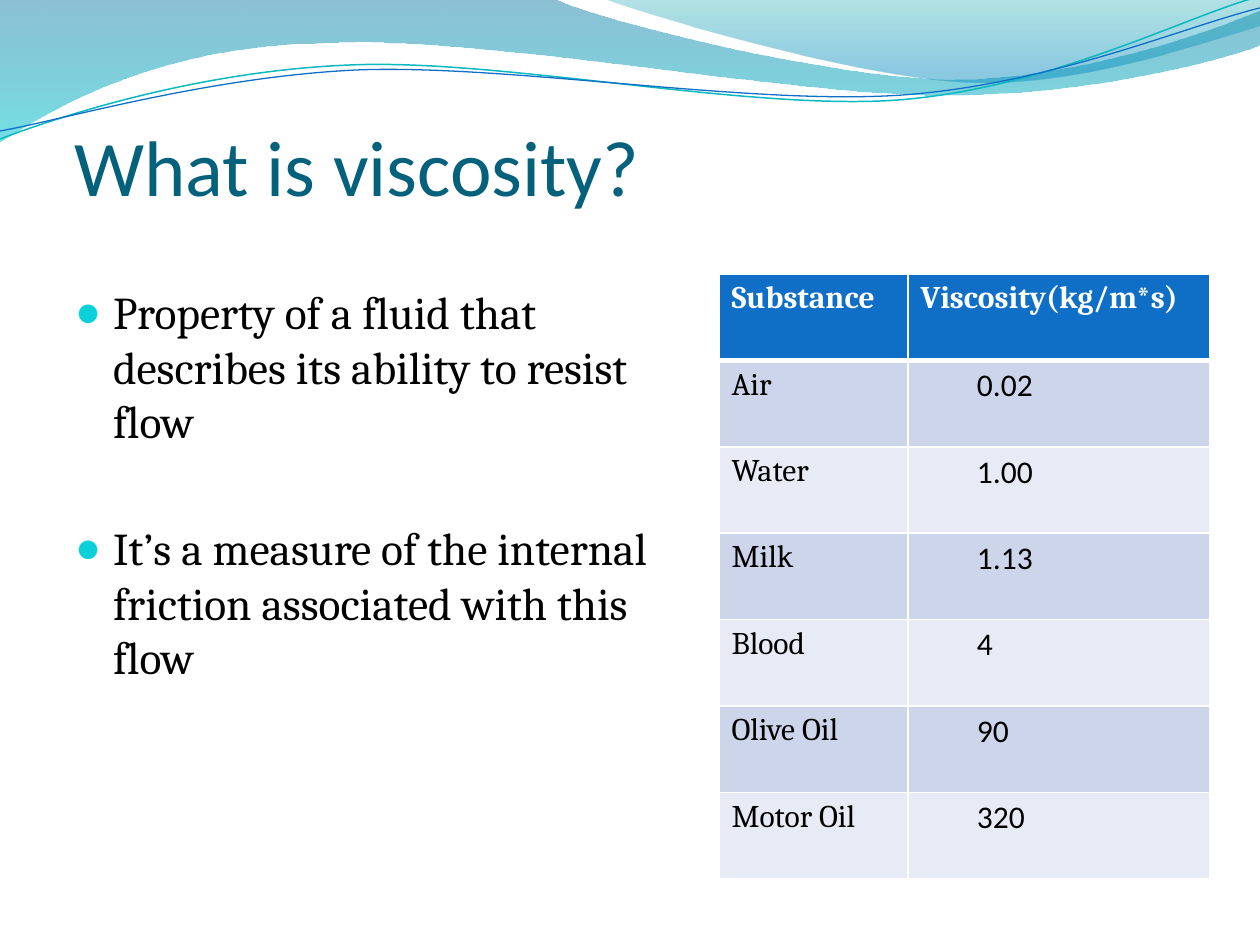
from lxml import etree
from pptx import Presentation
from pptx.dml.color import RGBColor
from pptx.enum.text import MSO_ANCHOR, MSO_AUTO_SIZE, PP_ALIGN
from pptx.oxml.ns import qn
from pptx.util import Pt

PX = 914400 / 126
BOTTOM, TOP = MSO_ANCHOR.BOTTOM, MSO_ANCHOR.TOP
LEFT = PP_ALIGN.LEFT
FIXED = MSO_AUTO_SIZE.NONE

WHITE = RGBColor(0xFF, 0xFF, 0xFF)
BLACK = RGBColor(0, 0, 0)
BLUE = RGBColor(0x0F, 0x6F, 0xC6)
TEAL = RGBColor(0x0A, 0xB8, 0xBF)
CYAN = RGBColor(0x0B, 0xD0, 0xD9)
TITLE = RGBColor(0x04, 0x61, 0x7B)
BANDS = RGBColor(0xCC, 0xD5, 0xEA), RGBColor(0xE7, 0xEB, 0xF5)

# Outlines: a pair is a line's end, six numbers are a Bezier curve.
# Stops: position, colour, opacity in percent.
WAVES = [
    ([(0, 0), (554, -1), (600, 21, 837, 79, 955, 79),
      (1075, 79, 1207, 33, 1260, 11), (1261, 45),
      (1239, 55, 1096, 96, 940, 95), (784, 95, 481, 35, 324, 43),
      (163, 45, 58, 105, -1, 142), (0, 0)],
     [(0, RGBColor(0x00, 0x74, 0xA1), 45), (1, RGBColor(0x00, 0xC6, 0xCF), 55)]),
    ([(604, -1), (641, 14, 859, 78, 969, 82),
      (1079, 87, 1211, 40, 1260, 26), (1260, 0), (604, -1)],
     [(0, RGBColor(0x00, 0xA1, 0xA9), 30), (0.8, RGBColor(0x00, 0x8B, 0xBF), 45)]),
]
LINES = [
    ([(0, 139), (60, 116, 199, 71, 349, 65), (498, 58, 747, 111, 898, 100),
      (1050, 88, 1182, 18, 1257, -3)], TEAL, 0.85),
    ([(0, 131), (59, 121, 207, 77, 357, 70), (508, 64, 752, 106, 903, 95),
      (1053, 84, 1186, 26, 1260, 8)], BLUE, 0.75),
]
POINTS = [
    "Property of a fluid that describes its ability to resist flow",
    "It’s a measure of the internal friction associated with this flow",
]
ROWS = [
    ("Substance", "Viscosity(kg/m*s)"),
    ("Air", "0.02"),
    ("Water", "1.00"),
    ("Milk", "1.13"),
    ("Blood", "4"),
    ("Olive Oil", "90"),
    ("Motor Oil", "320"),
]


def px(n):
    return round(n * PX)


def style(para, face, size, color, bold=False):
    font = para.font
    font.name, font.size, font.bold = face, Pt(size), bold
    font.color.rgb = color


def outline(slide, path, close):
    """Draw a freeform, then join each curve's three points into a Bezier."""
    pts = [(px(seg[i]), px(seg[i + 1]))
           for seg in path for i in range(0, len(seg), 2)]
    pen = slide.shapes.build_freeform(*pts[0])
    pen.add_line_segments(pts[1:], close=close)
    shape = pen.convert_to_shape()
    shape.shadow.inherit = False
    steps = iter(list(shape._element.spPr.iter(qn("a:lnTo"))))
    for seg in path[1:]:
        first = next(steps)
        if len(seg) == 6:
            curve = etree.Element(qn("a:cubicBezTo"))
            first.addprevious(curve)
            for step in (first, next(steps), next(steps)):
                curve.append(step[0])
                step.getparent().remove(step)
    return shape


def add_wave(slide, path, stops):
    shape = outline(slide, path, True)
    shape.line.fill.background()
    fill = shape.fill
    fill.gradient()
    fill.gradient_angle = 270
    for stop, (pos, color, _) in zip(fill.gradient_stops, stops):
        stop.position = pos
        stop.color.rgb = color
    tints = shape._element.spPr.iter(qn("a:srgbClr"))
    for tint, (_, _, alpha) in zip(list(tints), stops):
        etree.SubElement(tint, qn("a:alpha"), val=str(alpha * 1000))


def add_line(slide, path, color, width):
    shape = outline(slide, path, False)
    shape.fill.background()
    shape.line.color.rgb = color
    shape.line.width = Pt(width)


def place(shape, box, inset, anchor):
    """Move a placeholder to the front and set its box and insets."""
    shape.left, shape.top, shape.width, shape.height = map(px, box)
    frame = shape.text_frame
    (frame.margin_left, frame.margin_top,
     frame.margin_right, frame.margin_bottom) = map(px, inset)
    frame.auto_size = FIXED
    frame.word_wrap = True
    frame.vertical_anchor = anchor
    shape._element.getparent().append(shape._element)
    return frame


def add_title(slide, text):
    frame = place(slide.shapes.title, (74, 105, 1134, 107), (0, 6, 0, 0), BOTTOM)
    frame.text = text
    para = frame.paragraphs[0]
    para.alignment = LEFT
    style(para, "Calibri", 45, TITLE)


def add_list(slide, items):
    frame = place(slide.placeholders[1], (62, 214, 646, 630),
                  (13, 70, 13, 6), TOP)
    frame.text = "\n".join(items)
    for i, para in enumerate(frame.paragraphs):
        para.space_before = Pt(41.5 if i else 0)
        style(para, "Cambria", 26, BLACK)
        props = para._p.get_or_add_pPr()
        props.set("marL", str(px(38)))
        props.set("indent", str(px(-38)))
        mark = etree.Element(qn("a:buClr"))
        etree.SubElement(mark, qn("a:srgbClr"), val=str(CYAN))
        size = etree.Element(qn("a:buSzPct"), val="95000")
        char = etree.Element(qn("a:buChar"), char="●")
        spot = props.index(props.find(qn("a:defRPr")))
        props[spot:spot] = [mark, size, char]


def add_rules(cell, row):
    props = cell._tc.get_or_add_tcPr()
    for i, side in enumerate("LRTB"):
        thick = (row, side) in ((0, "B"), (1, "T"))
        rule = etree.Element(qn("a:ln" + side), w=str(Pt(3 if thick else 1)))
        fill = etree.SubElement(rule, qn("a:solidFill"))
        etree.SubElement(fill, qn("a:srgbClr"), val=str(WHITE))
        props.insert(i, rule)


def add_grid(slide, rows):
    box = map(px, (719, 274, 491, 605))
    grid = slide.shapes.add_table(len(rows), 2, *box).table
    for col, width in zip(grid.columns, (189, 302)):
        col.width = px(width)
    for r, row in enumerate(rows):
        for c, text in enumerate(row):
            cell = grid.cell(r, c)
            cell.text = text
            cell.fill.solid()
            cell.fill.fore_color.rgb = BANDS[(r - 1) % 2] if r else BLUE
            add_rules(cell, r)
            value = r > 0 and c == 1
            if value:
                cell.margin_left = px(69)
            style(cell.text_frame.paragraphs[0],
                  "Calibri" if value else "Cambria", 18,
                  BLACK if r else WHITE, r == 0)


def main():
    deck = Presentation()
    deck.slide_width, deck.slide_height = px(1260), px(945)
    slide = deck.slides.add_slide(deck.slide_layouts[1])
    for wave in WAVES:
        add_wave(slide, *wave)
    for line in LINES:
        add_line(slide, *line)
    add_title(slide, "What is viscosity?")
    add_list(slide, POINTS)
    add_grid(slide, ROWS)
    deck.save("out.pptx")


if __name__ == "__main__":
    main()
